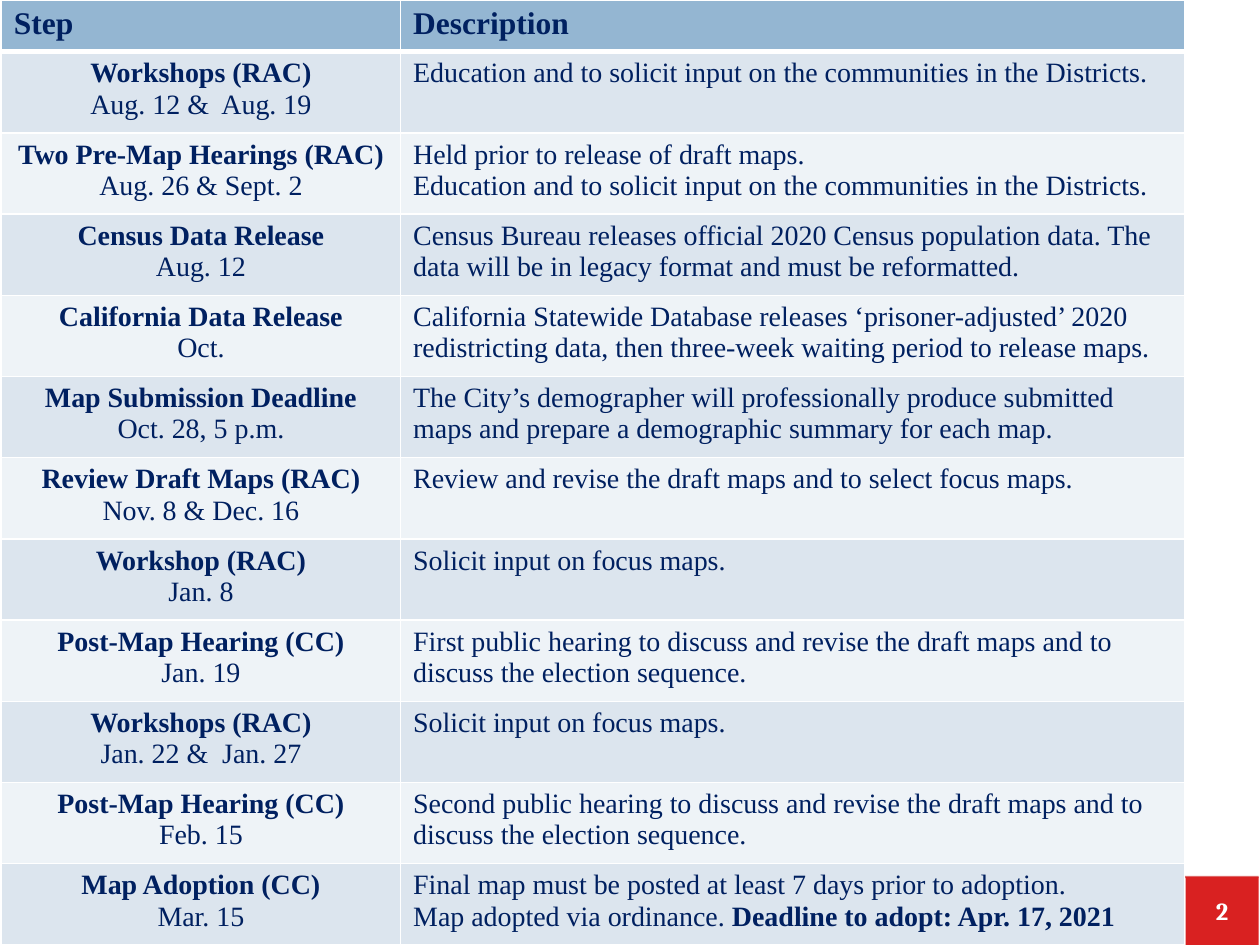
from lxml import etree
from pptx import Presentation
from pptx.dml.color import RGBColor
from pptx.enum.shapes import MSO_CONNECTOR as CONN, MSO_SHAPE as SHAPE
from pptx.enum.text import MSO_ANCHOR as ANCHOR, PP_ALIGN as ALIGN
from pptx.oxml import parse_xml
from pptx.oxml.ns import nsdecls, qn
from pptx.util import Inches, Pt

WHITE = RGBColor(0xFF, 0xFF, 0xFF)
NAVY = RGBColor(0x00, 0x20, 0x60)
HEADER = RGBColor(0x94, 0xB6, 0xD2)
BANDS = (RGBColor(0xDC, 0xE5, 0xEE), RGBColor(0xEE, 0xF3, 0xF7))
RED = RGBColor(0xD9, 0x21, 0x21)
RULE = RGBColor(0xC8, 0x00, 0x00)

EDUCATION = "Education and to solicit input on the communities in the Districts."
FOCUS = "Solicit input on focus maps."
HEARING = " public hearing to discuss and revise the draft maps and to discuss the election sequence."
STEPS = [
    ("Workshops (RAC)", "Aug. 12 &  Aug. 19", [EDUCATION]),
    ("Two Pre-Map Hearings (RAC)", "Aug. 26 & Sept. 2",
     ["Held prior to release of draft maps.", EDUCATION]),
    ("Census Data Release", "Aug. 12",
     ["Census Bureau releases official 2020 Census population data. "
      "The data will be in legacy format and must be reformatted."]),
    ("California Data Release", "Oct.",
     ["California Statewide Database releases ‘prisoner-adjusted’ 2020 "
      "redistricting data, then three-week waiting period to release maps."]),
    ("Map Submission Deadline", "Oct. 28, 5 p.m.",
     ["The City’s demographer will professionally produce submitted "
      "maps and prepare a demographic summary for each map."]),
    ("Review Draft Maps (RAC)", "Nov. 8 & Dec. 16",
     ["Review and revise the draft maps and to select focus maps."]),
    ("Workshop (RAC)", "Jan. 8", [FOCUS]),
    ("Post-Map Hearing (CC)", "Jan. 19", ["First" + HEARING]),
    ("Workshops (RAC)", "Jan. 22 &  Jan. 27", [FOCUS]),
    ("Post-Map Hearing (CC)", "Feb. 15", ["Second" + HEARING]),
    ("Map Adoption (CC)", "Mar. 15",
     ["Final map must be posted at least 7 days prior to adoption.",
      ("Map adopted via ordinance. ", "Deadline to adopt: Apr. 17, 2021")]),
]


def add_text(p, text, size=16, bold=False, color=NAVY, font="Times New Roman", align=ALIGN.LEFT):
    p.alignment = align
    r = p.add_run()
    r.text = text
    r.font.size, r.font.bold, r.font.name = Pt(size), bold, font
    r.font.color.rgb = color


class SlideBuilder:
    """Holds the slide and draws its elements in one style."""

    def __init__(self, prs):
        self.s = prs.slides.add_slide(prs.slide_layouts[6])

    def line(self, x1, y1, x2, y2, color, width, alpha):
        sp = self.s.shapes.add_connector(CONN.STRAIGHT, Inches(x1), Inches(y1), Inches(x2), Inches(y2))
        sp.line.color.rgb, sp.line.width = color, Pt(width)
        srgb = next(sp._element.iter(qn("a:srgbClr")))
        etree.SubElement(srgb, qn("a:alpha")).set("val", str(alpha * 1000))
        etree.SubElement(sp._element.spPr, qn("a:effectLst"))

    def page_number(self, x, y, w, h, text):
        sp = self.s.shapes.add_shape(SHAPE.RECTANGLE, Inches(x), Inches(y), Inches(w), Inches(h))
        sp.shadow.inherit = False
        sp.fill.solid()
        sp.fill.fore_color.rgb = RED
        sp.line.fill.background()
        tf = sp.text_frame
        tf.word_wrap, tf.vertical_anchor = True, ANCHOR.MIDDLE
        add_text(tf.paragraphs[0], text, 14, True, WHITE, "Cambria", ALIGN.CENTER)

    def cell(self, cell, fill, top=1, bottom=1):
        cell.fill.solid()
        cell.fill.fore_color.rgb = fill
        tcPr = cell._tc.get_or_add_tcPr()
        for i, (side, width) in enumerate(zip("LRTB", (1, 1, top, bottom))):
            tcPr.insert(i, parse_xml(
                f'<a:ln{side} {nsdecls("a")} w="{Pt(width)}"><a:solidFill>'
                f'<a:srgbClr val="{WHITE}"/></a:solidFill></a:ln{side}>'))
        return cell.text_frame

    def table(self, x, y, widths, header_height, height, headings, steps):
        frame = self.s.shapes.add_table(len(steps) + 1, len(widths), Inches(x), Inches(y),
                                        Inches(sum(widths)), Inches(height))
        tbl = frame.table
        for col, width in zip(tbl.columns, widths):
            col.width = Inches(width)
        for row in tbl.rows:
            row.height = Inches((height - header_height) / len(steps))
        tbl.rows[0].height = Inches(header_height)
        for c, heading in enumerate(headings):
            tf = self.cell(tbl.cell(0, c), HEADER, bottom=3)
            add_text(tf.paragraphs[0], heading, 18, True)
        for i, (step, date, description) in enumerate(steps, 1):
            fill, top = BANDS[(i - 1) % 2], 3 if i == 1 else 1
            tf = self.cell(tbl.cell(i, 0), fill, top)
            add_text(tf.paragraphs[0], step, bold=True, align=ALIGN.CENTER)
            add_text(tf.add_paragraph(), date, align=ALIGN.CENTER)
            tf = self.cell(tbl.cell(i, 1), fill, top)
            for n, item in enumerate(description):
                p = tf.add_paragraph() if n else tf.paragraphs[0]
                plain, strong = (item, "") if isinstance(item, str) else item
                add_text(p, plain)
                if strong:
                    add_text(p, strong, bold=True)


def main():
    prs = Presentation()
    prs.slide_width, prs.slide_height = Inches(10), Inches(7.5)
    slide = SlideBuilder(prs)
    slide.line(1.42, 6.96, 9.99, 6.96, RULE, 1.25, 55)
    slide.page_number(9.41, 6.96, 0.58, 0.54, "2")
    slide.table(0.01, 0, (3.17, 6.22), 0.41, 7.5, ("Step", "Description"), STEPS)
    prs.save("out.pptx")


if __name__ == "__main__":
    main()
